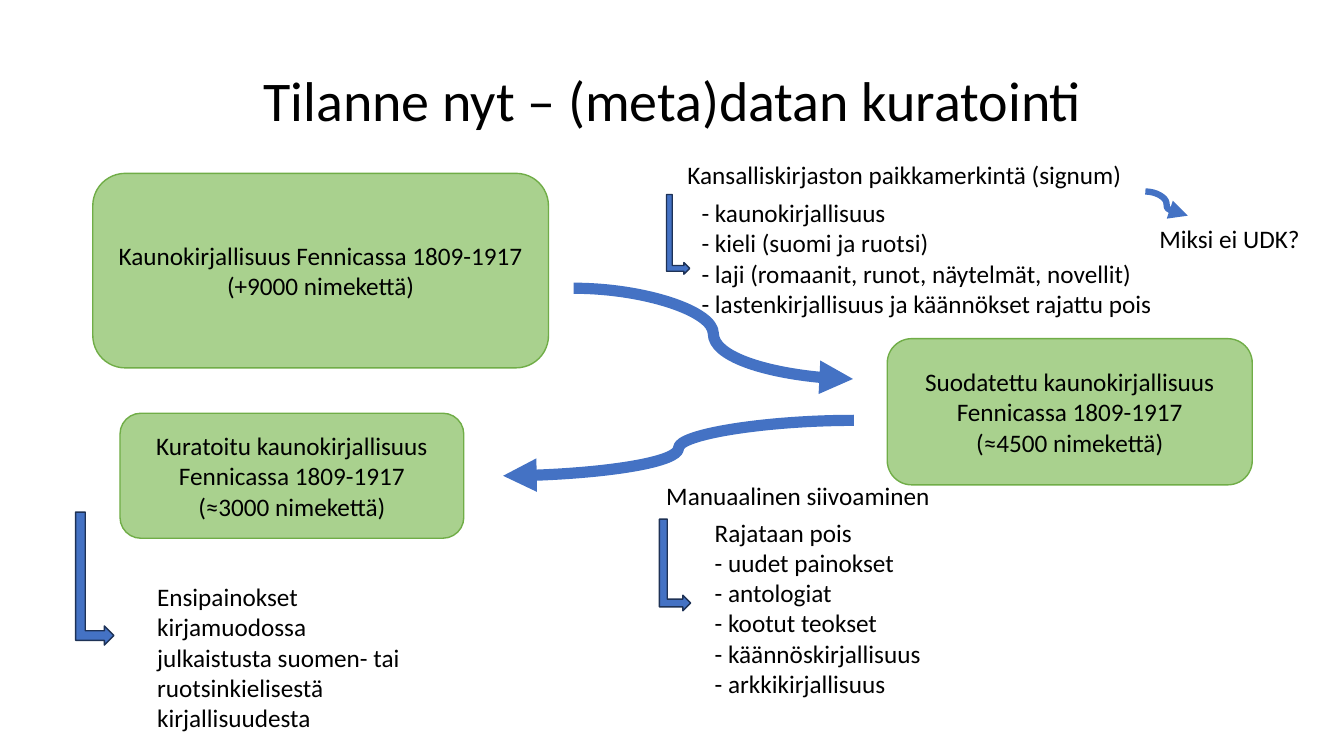
from lxml.etree import SubElement
from pptx import Presentation
from pptx.dml.color import RGBColor
from pptx.enum.shapes import MSO_CONNECTOR, MSO_SHAPE
from pptx.enum.text import MSO_ANCHOR, MSO_AUTO_SIZE, PP_ALIGN
from pptx.oxml.ns import qn
from pptx.util import Inches, Pt

# Grid of one-inch cells; places are (column, row, columns wide, rows high)
COLUMNS, ROWS = 13.33, 7.5
CELL = Inches(1)
BLACK, GREEN, GREEN_EDGE = "000000", "A9D18E", "70AD47"
BLUE, BLUE_EDGE = "4472C4", "1E3256"

TITLE = "Tilanne nyt – (meta)datan kuratointi"
TITLE_PLACE = (0.92, 0.3, 11.5, 1.45)

STAGES = [
    ((0.92, 1.72, 4.52, 1.93),
     ["Kaunokirjallisuus Fennicassa 1809-1917", "(+9000 nimekettä)"]),
    ((8.8, 3.36, 3.62, 1.45),
     ["Suodatettu kaunokirjallisuus", "Fennicassa 1809-1917", "(≈4500 nimekettä)"]),
    ((1.19, 4.1, 3.41, 1.24),
     ["Kuratoitu kaunokirjallisuus Fennicassa 1809-1917", "(≈3000 nimekettä)"]),
]
# Start column and row, end column and row, line width
FLOWS = [
    ((5.69, 2.86, 8.46, 3.76), 8),
    ((8.47, 4.17, 4.99, 4.72), 8),
    ((11.36, 1.9, 11.78, 2.14), 4.5),
]
NOTES = [
    ((6.72, 1.53, 4.52, 0.4), ["Kansalliskirjaston paikkamerkintä (signum)"]),
    ((11.4, 2.17, 1.8, 0.4), ["Miksi ei UDK?"]),
    ((6.86, 1.91, 5.2, 1.31),
     ["- kaunokirjallisuus", "- kieli (suomi ja ruotsi)",
      "- laji (romaanit, runot, näytelmät, novellit)",
      "- lastenkirjallisuus ja käännökset rajattu pois"]),
    ((6.51, 4.72, 3.76, 0.4), ["Manuaalinen siivoaminen"]),
    ((6.99, 5.08, 3.61, 1.92),
     ["Rajataan pois", "- uudet painokset", "- antologiat", "- kootut teokset",
      "- käännöskirjallisuus", "- arkkikirjallisuus"]),
    ((1.46, 5.72, 2.81, 1.62),
     ["Ensipainokset kirjamuodossa julkaistusta suomen- tai "
      "ruotsinkielisestä kirjallisuudesta"]),
]
DETAIL_ARROWS = [
    (6.61, 1.93, 0.23, 0.79),
    (6.54, 5.15, 0.31, 0.91),
    (0.75, 5.08, 0.38, 1.32),
]


def on_grid(place):
    return [round(length * CELL) for length in place]


def color(hex_string):
    return RGBColor.from_string(hex_string)


def write(frame, lines, size=18, align=PP_ALIGN.LEFT, spacing=None, **frame_format):
    for name, value in {"word_wrap": True, **frame_format}.items():
        setattr(frame, name, value)
    frame.text = "\n".join(lines)
    for paragraph in frame.paragraphs:
        paragraph.alignment, paragraph.line_spacing = align, spacing
        font = paragraph.runs[0].font
        font.name, font.size, font.color.rgb = "Calibri", Pt(size), color(BLACK)


def add_filled(slide, kind, place, fill, edge):
    shape = slide.shapes.add_shape(kind, *on_grid(place))
    shape.shadow.inherit = False
    shape.fill.solid()
    shape.fill.fore_color.rgb = color(fill)
    shape.line.color.rgb, shape.line.width = color(edge), Pt(1)
    return shape


def add_flow(slide, ends, width):
    flow = slide.shapes.add_connector(MSO_CONNECTOR.CURVE, *on_grid(ends))
    flow.line.color.rgb, flow.line.width = color(BLUE), Pt(width)
    SubElement(flow.line._get_or_add_ln(), qn("a:tailEnd"), type="triangle")
    SubElement(flow._element.spPr, qn("a:effectLst"))


def add_detail_arrow(slide, place):
    """Turn the bent arrow a quarter so that it fills the given upright place."""
    left, top, width, height = place
    shift = (height - width) / 2
    unturned = (left - shift, top + shift, height, width)
    arrow = add_filled(slide, MSO_SHAPE.BENT_UP_ARROW, unturned, BLUE, BLUE_EDGE)
    arrow.rotation = 90


def main():
    deck = Presentation()
    deck.slide_width, deck.slide_height = on_grid((COLUMNS, ROWS))
    slide = deck.slides.add_slide(deck.slide_layouts[5])

    title = slide.shapes.title
    title.left, title.top, title.width, title.height = on_grid(TITLE_PLACE)
    write(title.text_frame, [TITLE], 40, PP_ALIGN.CENTER, 0.9,
          vertical_anchor=MSO_ANCHOR.MIDDLE, auto_size=MSO_AUTO_SIZE.NONE)

    for place, lines in STAGES:
        stage = add_filled(slide, MSO_SHAPE.ROUNDED_RECTANGLE, place, GREEN, GREEN_EDGE)
        write(stage.text_frame, lines, align=PP_ALIGN.CENTER,
              vertical_anchor=MSO_ANCHOR.MIDDLE)
    for ends, width in FLOWS:
        add_flow(slide, ends, width)
    for place, lines in NOTES:
        note = slide.shapes.add_textbox(*on_grid(place))
        write(note.text_frame, lines, auto_size=MSO_AUTO_SIZE.SHAPE_TO_FIT_TEXT)
    for place in DETAIL_ARROWS:
        add_detail_arrow(slide, place)

    deck.save("out.pptx")


if __name__ == "__main__":
    main()
